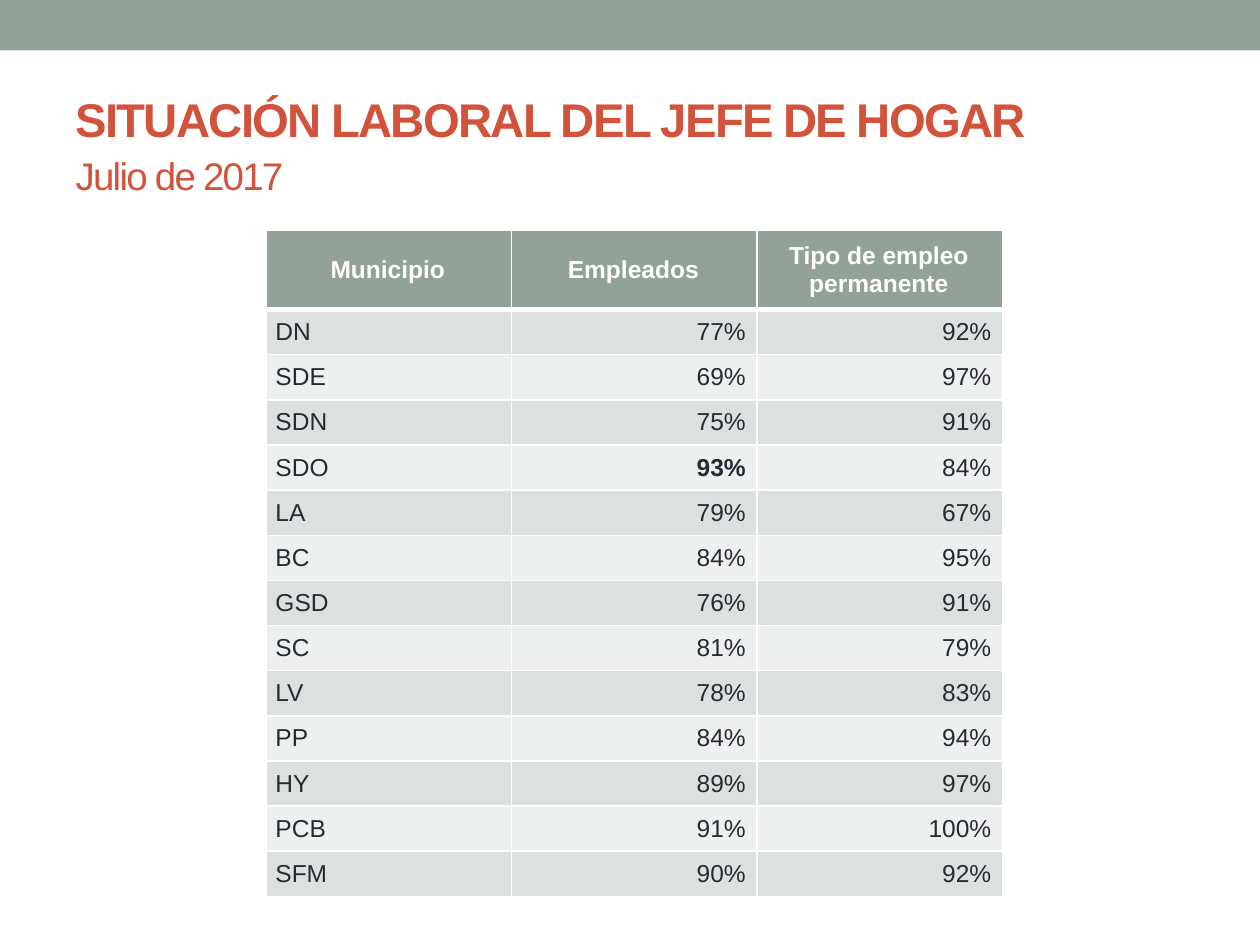
from copy import deepcopy
from dataclasses import dataclass

from lxml import etree
from pptx import Presentation
from pptx.dml.color import RGBColor
from pptx.enum import shapes, text
from pptx.oxml import ns
from pptx.util import Pt


@dataclass(frozen=True)
class Theme:
    font: str = "Arial"
    sage: str = "93A299"
    red: str = "D2533C"
    ink: str = "292934"
    white: str = "FFFFFF"
    bands: tuple = ("DCE0DE", "EEF0EF")
    title: int = 27
    sub: int = 22
    cell: int = 14


THEME = Theme()
HEADS = ("Municipio", "Empleados", "Tipo de empleo permanente")
ROWS = (
    ("DN", 77, 92), ("SDE", 69, 97), ("SDN", 75, 91), ("SDO", 93, 84),
    ("LA", 79, 67), ("BC", 84, 95), ("GSD", 76, 91), ("SC", 81, 79),
    ("LV", 78, 83), ("PP", 84, 94), ("HY", 89, 97), ("PCB", 91, 100),
    ("SFM", 90, 92),
)
STRONG = ("SDO", 1)
COL, HEAD, ROW = 140.3, 45.4, 25.8


def paint(fill, color):
    fill.solid()
    fill.fore_color.rgb = RGBColor.from_string(color)


def add_run(para, words, size, color, bold=False):
    run = para.add_run()
    run.text = words
    font = run.font
    font.name, font.size, font.bold = THEME.font, Pt(size), bold
    font.color.rgb = RGBColor.from_string(color)
    return run


def add_bar(slide):
    bar = slide.shapes.add_shape(
        shapes.MSO_SHAPE.RECTANGLE, 0, 0, Pt(720), Pt(28.8))
    bar.shadow.inherit = False
    paint(bar.fill, THEME.sage)
    bar.line.fill.background()


def set_title(slide, head, sub):
    title = slide.shapes.title
    title.left, title.top = Pt(36), Pt(41.8)
    title.width, title.height = Pt(648), Pt(77.8)
    frame = title.text_frame
    frame.auto_size = text.MSO_AUTO_SIZE.NONE
    frame.vertical_anchor = text.MSO_ANCHOR.MIDDLE
    para = frame.paragraphs[0]
    para.alignment = text.PP_ALIGN.LEFT
    para.line_spacing = 1.1
    first = add_run(para, head, THEME.title, THEME.red, True)
    para.add_line_break()
    gap = para._p[-1]
    second = add_run(para, sub, THEME.sub, THEME.red)
    for run in (first, second):
        run._r.get_or_add_rPr().set("spc", "-100")
    # The break takes the heading's size, so the first line keeps its height.
    gap.append(deepcopy(first._r.rPr))


def set_edges(cell, top=1, bottom=1):
    """Draw white borders; call before the cell is filled."""
    props = cell._tc.get_or_add_tcPr()
    for side, width in zip("LRTB", (1, 1, top, bottom)):
        line = etree.SubElement(props, ns.qn(f"a:ln{side}"), w=str(Pt(width)))
        fill = etree.SubElement(line, ns.qn("a:solidFill"))
        etree.SubElement(fill, ns.qn("a:srgbClr"), val=THEME.white)


def set_cell(cell, words, fill, color, align, bold=False, **edges):
    set_edges(cell, **edges)
    paint(cell.fill, fill)
    cell.vertical_anchor = text.MSO_ANCHOR.MIDDLE
    cell.margin_left, cell.margin_right = Pt(5.4), Pt(6.4)
    para = cell.text_frame.paragraphs[0]
    para.alignment = align
    add_run(para, words, THEME.cell, color, bold)


def add_grid(slide):
    frame = slide.shapes.add_table(
        len(ROWS) + 1, len(HEADS), Pt(152), Pt(131.5),
        Pt(COL * len(HEADS)), Pt(HEAD + ROW * len(ROWS)))
    grid = frame.table
    for col in grid.columns:
        col.width = Pt(COL)
    for i, row in enumerate(grid.rows):
        row.height = Pt(ROW if i else HEAD)
    for j, head in enumerate(HEADS):
        set_cell(grid.cell(0, j), head, THEME.sage, THEME.white,
                 text.PP_ALIGN.CENTER, True, bottom=3)
    for i, row in enumerate(ROWS):
        for j, value in enumerate(row):
            set_cell(grid.cell(i + 1, j), f"{value}%" if j else value,
                     THEME.bands[i % 2], THEME.ink,
                     text.PP_ALIGN.RIGHT if j else text.PP_ALIGN.LEFT,
                     (row[0], j) == STRONG, top=1 if i else 3)


def main():
    deck = Presentation()
    deck.slide_width, deck.slide_height = Pt(720), Pt(540)
    slide = deck.slides.add_slide(deck.slide_layouts.get_by_name("Title Only"))
    paint(slide.background.fill, THEME.white)
    add_bar(slide)
    set_title(slide, "SITUACIÓN LABORAL DEL JEFE DE HOGAR", "Julio de 2017")
    add_grid(slide)
    deck.save("out.pptx")


if __name__ == "__main__":
    main()
